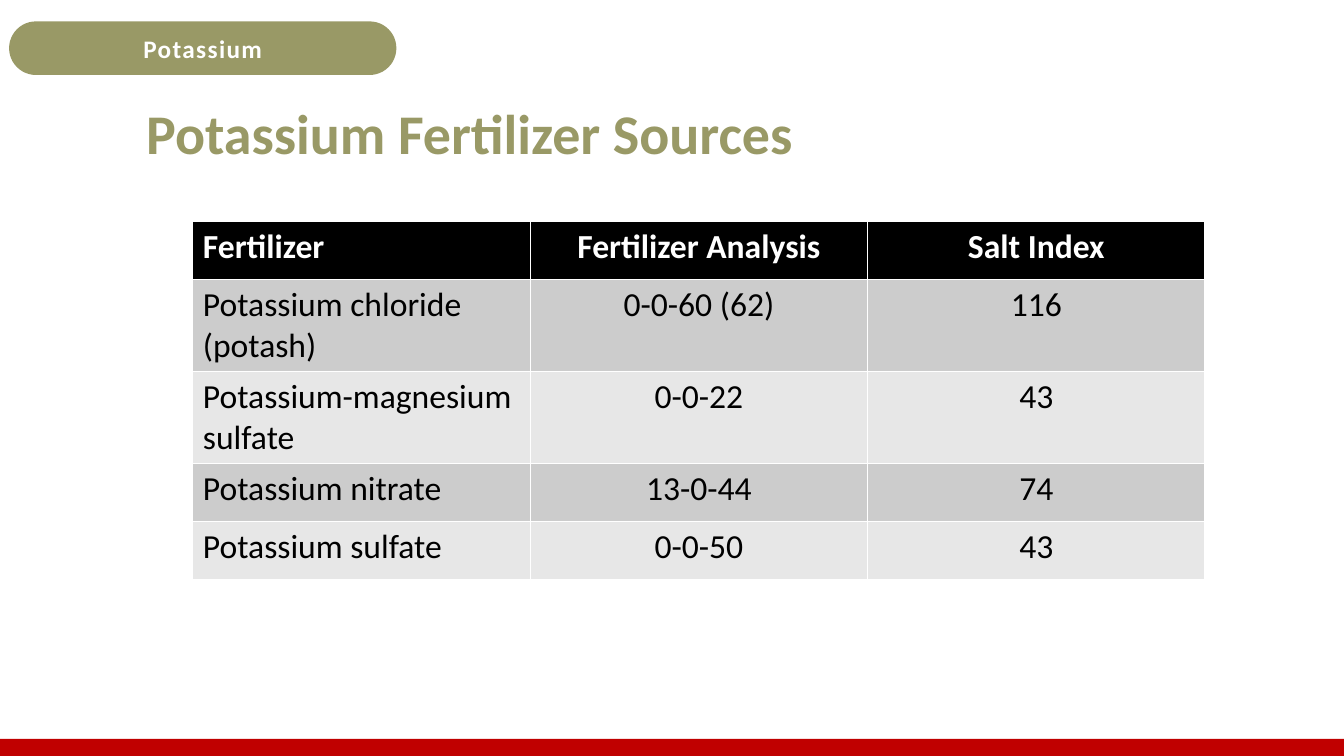
from pptx import Presentation
from pptx.dml.color import RGBColor
from pptx.enum.shapes import MSO_SHAPE
from pptx.enum.text import MSO_ANCHOR, MSO_AUTO_SIZE, PP_ALIGN
from pptx.util import Cm, Pt

FONT = "Calibri"
OLIVE, RED, WHITE, BLACK = "999966", "C00000", "FFFFFF", "000000"
BANDS = ("CCCCCC", "E7E7E7")

FERTILIZERS = [
    ("Fertilizer", "Fertilizer Analysis", "Salt Index"),
    ("Potassium chloride (potash)", "0-0-60 (62)", "116"),
    ("Potassium-magnesium sulfate", "0-0-22", "43"),
    ("Potassium nitrate", "13-0-44", "74"),
    ("Potassium sulfate", "0-0-50", "43"),
]


def rgb(color):
    return RGBColor.from_string(color)


def add_text(tf, text, size, color, bold=False, align=PP_ALIGN.LEFT):
    """Write one run into the first paragraph and return both."""
    p = tf.paragraphs[0]
    p.alignment = align
    r = p.add_run()
    r.text = text
    r.font.name = FONT
    r.font.size = Pt(size)
    r.font.bold = bold
    r.font.color.rgb = rgb(color)
    return p, r


def add_block(slide, kind, color, left, top, width, height):
    sp = slide.shapes.add_shape(kind, left, top, width, height)
    sp.shadow.inherit = False
    sp.fill.solid()
    sp.fill.fore_color.rgb = rgb(color)
    sp.line.fill.background()
    return sp


def add_topic_pill(slide, text, left, top, width, height):
    sp = add_block(slide, MSO_SHAPE.ROUNDED_RECTANGLE, OLIVE,
                   left, top, width, height)
    sp.adjustments[0] = 0.5
    tf = sp.text_frame
    tf.vertical_anchor = MSO_ANCHOR.MIDDLE
    p, r = add_text(tf, text, 18, WHITE, True, PP_ALIGN.CENTER)
    r.font._element.set("spc", "100")


def set_title(slide, text, left, top, width, height):
    sp = slide.shapes.title
    sp.left, sp.top, sp.width, sp.height = left, top, width, height
    tf = sp.text_frame
    tf.auto_size = MSO_AUTO_SIZE.NONE
    tf.vertical_anchor = MSO_ANCHOR.MIDDLE
    p, r = add_text(tf, text, 40, OLIVE, True)
    p.line_spacing = 0.9


def add_fertilizer_table(slide, rows, left, top, width, row_height):
    """Add the table; rows with wrapped names grow to fit their text."""
    table = slide.shapes.add_table(len(rows), len(rows[0]), left, top,
                                   width, row_height * len(rows)).table
    for i, row in enumerate(rows):
        header = i == 0
        for j, text in enumerate(row):
            cell = table.cell(i, j)
            cell.fill.solid()
            cell.fill.fore_color.rgb = rgb(BLACK if header
                                           else BANDS[(i - 1) % 2])
            add_text(cell.text_frame, text, 24, WHITE if header else BLACK,
                     header, PP_ALIGN.CENTER if j else PP_ALIGN.LEFT)


def main():
    prs = Presentation()
    prs.slide_width, prs.slide_height = Cm(33.87), Cm(19.05)
    slide = prs.slides.add_slide(prs.slide_layouts[5])

    bar_height = Cm(0.43)
    add_block(slide, MSO_SHAPE.RECTANGLE, RED, 0,
              prs.slide_height - bar_height, prs.slide_width, bar_height)
    add_topic_pill(slide, "Potassium", Cm(0.23), Cm(0.54), Cm(9.76), Cm(1.35))
    set_title(slide, "Potassium Fertilizer Sources",
              Cm(3.43), Cm(2.16), Cm(27.66), Cm(2.54))
    add_fertilizer_table(slide, FERTILIZERS,
                         Cm(4.86), Cm(5.58), Cm(25.51), Cm(1.46))
    prs.save("out.pptx")


if __name__ == "__main__":
    main()
